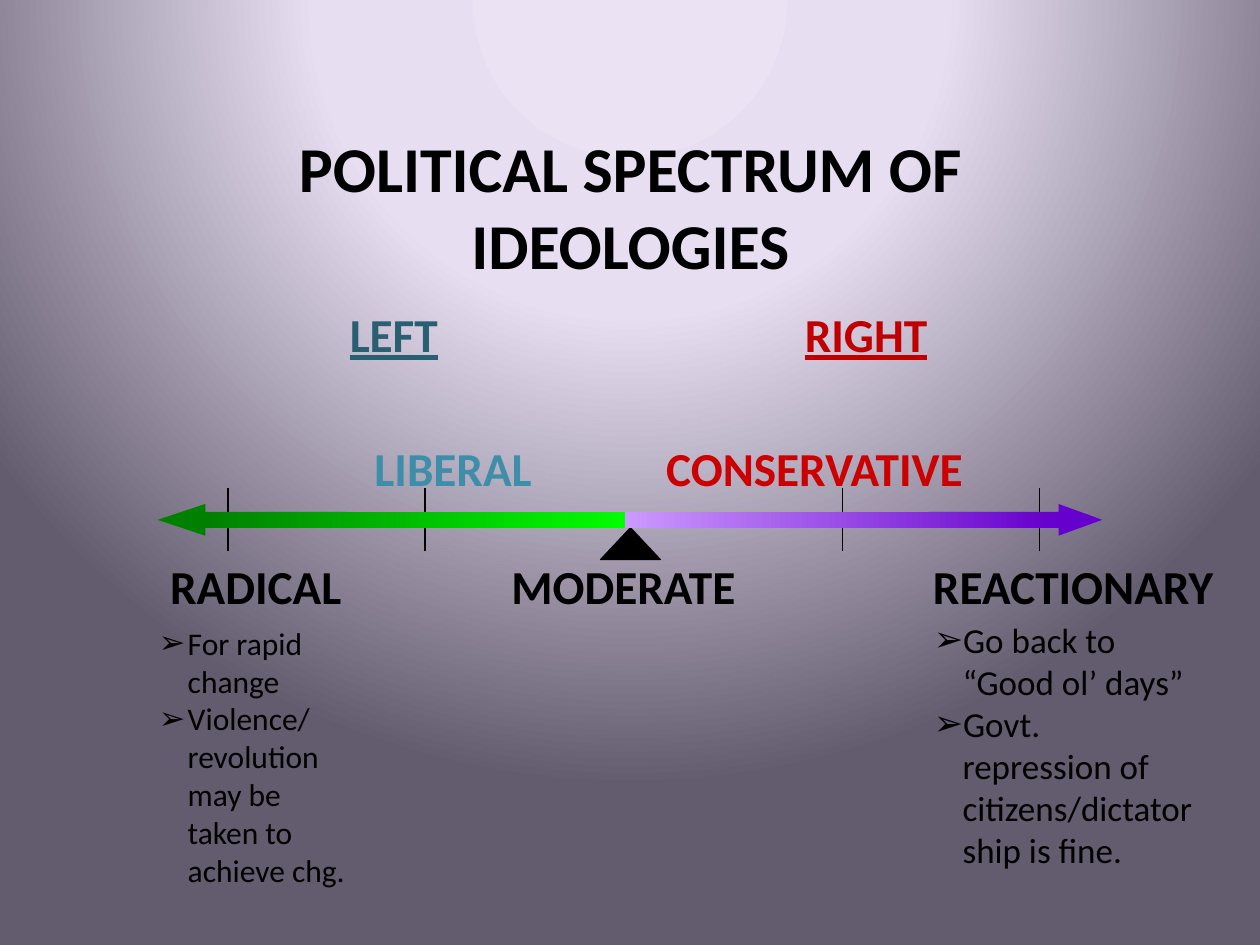
import pptx
import pptx.dml.color
import pptx.enum.shapes
import pptx.enum.text
import pptx.oxml
import pptx.oxml.ns
import pptx.util
from lxml import etree

Cm, Pt = pptx.util.Cm, pptx.util.Pt
RGB = pptx.dml.color.RGBColor.from_string
Shape = pptx.enum.shapes.MSO_SHAPE
Align = pptx.enum.text.PP_ALIGN
qn = pptx.oxml.ns.qn

HUES = {
    "black": "000000", "green": "008000", "lime": "00FF00",
    "lilac": "CC99FF", "purple": "6600CC", "teal": "295F71",
    "blue": "3E8EA9", "red": "CC0000", "dark red": "C00000",
    "glow": "EBE3F4", "pale": "E7DEF2", "dusk": "635B6E",
}


def write(box, text, size=27, hue="black", bold=True, under=False,
          align=Align.LEFT, mark=None, wrap=True):
    frame = box.text_frame
    frame.word_wrap = wrap
    frame.auto_size = pptx.enum.text.MSO_AUTO_SIZE.NONE
    frame.text = text
    for para in frame.paragraphs:
        para.alignment = align
        para.space_before = Pt(0)
        font = para.runs[0].font
        font.name, font.size = "Calibri", Pt(size)
        font.bold, font.underline = bold, under
        font.color.rgb = RGB(HUES[hue])
        if mark:
            props = para._p.get_or_add_pPr()
            props.set("marL", str(Cm(0.58)))
            props.set("indent", str(-Cm(0.58)))
            etree.SubElement(props, qn("a:buFont")).set("typeface", "Wingdings")
            props[-1].set("typeface", "Calibri")
            etree.SubElement(props, qn("a:buChar")).set("char", mark)


def place(box, left, top, width, height):
    box.left, box.top = Cm(left), Cm(top)
    box.width, box.height = Cm(width), Cm(height)


deck = pptx.Presentation()
deck.slide_width, deck.slide_height = Cm(25.4), Cm(19.05)
slide = deck.slides.add_slide(deck.slide_layouts[3])
shapes = slide.shapes

# Round glow behind the slide, centred above its top edge
stops = "".join(
    f'<a:gs pos="{pos * 1000}"><a:srgbClr val="{HUES[hue]}"/></a:gs>'
    for pos, hue in [(0, "glow"), (40, "pale"), (100, "dusk")])
back = pptx.oxml.parse_xml(
    f'<p:bg {pptx.oxml.ns.nsdecls("p", "a")}><p:bgPr><a:gradFill rotWithShape="1">'
    f'<a:gsLst>{stops}</a:gsLst><a:path path="circle">'
    '<a:fillToRect l="50000" t="-80000" r="50000" b="180000"/></a:path>'
    '</a:gradFill><a:effectLst/></p:bgPr></p:bg>')
slide.element.cSld.insert(0, back)

title, left_list, right_list = slide.placeholders
place(title, 3.18, 2.95, 19.05, 2.39)
write(title, "POLITICAL SPECTRUM OF IDEOLOGIES", size=36.5, align=Align.CENTER)
title.text_frame.vertical_anchor = pptx.enum.text.MSO_ANCHOR.MIDDLE

# Arrow ends and the pivot
for kind, spot, hue, adjs in [
    (Shape.LEFT_ARROW, (3.18, 10.16, 3.81, 0.64), "green", (0.5, 1.5)),
    (Shape.RIGHT_ARROW, (18.73, 10.16, 3.49, 0.64), "purple", (0.5, 1.375)),
    (Shape.ISOSCELES_TRIANGLE, (12.11, 10.64, 1.2, 0.64), "black", (0.5,)),
]:
    part = shapes.add_shape(kind, *map(Cm, spot))
    part.shadow.inherit = False
    for i, adj in enumerate(adjs):
        part.adjustments[i] = adj
    part.fill.solid()
    part.fill.fore_color.rgb = RGB(HUES[hue])
    if kind == Shape.ISOSCELES_TRIANGLE:
        part.line.color.rgb = RGB(HUES[hue])
        part.line.width = Pt(0.75)
    else:
        part.line.fill.background()

# Names of the ideologies and the two sides
for text, left, top, width, style in [
    ("RADICAL", 3.18, 11.11, 4.76, {}),
    ("REACTIONARY", 16.61, 11.11, 8.1, {"align": Align.RIGHT}),
    ("MODERATE", 10.06, 11.11, 5.21, {"wrap": False}),
    ("LIBERAL", 7.3, 8.73, 4.76, {"hue": "blue"}),
    ("CONSERVATIVE", 13.18, 8.73, 8.1, {"hue": "red"}),
    ("LEFT", 5.56, 6.03, 4.76,
     {"hue": "teal", "under": True, "align": Align.CENTER}),
    ("RIGHT", 15.08, 6.03, 4.76,
     {"hue": "dark red", "under": True, "align": Align.CENTER}),
]:
    label = shapes.add_textbox(Cm(left), Cm(top), Cm(width), Cm(1.43))
    write(label, text, **style)

for x in (8.57, 4.6, 16.99, 20.96):
    tick = shapes.add_connector(pptx.enum.shapes.MSO_CONNECTOR.STRAIGHT,
                                Cm(x), Cm(9.84), Cm(x), Cm(11.11))
    tick.line.color.rgb = RGB(HUES["black"])
    tick.line.width = Pt(0.75)
    etree.SubElement(tick._element.spPr, qn("a:effectLst"))

# Shaded halves of the axis
for left, hues in [(4.13, ("green", "lime")), (12.6, ("lilac", "purple"))]:
    half = shapes.add_shape(Shape.RECTANGLE, Cm(left), Cm(10.32), Cm(8.58), Cm(0.32))
    half.shadow.inherit = False
    half.line.fill.background()
    half.fill.gradient()
    half.fill.gradient_angle = 0
    for stop, pos, hue in zip(half.fill.gradient_stops, (0, 1), hues):
        stop.position = pos
        stop.color.rgb = RGB(HUES[hue])

for box, spot, size, text in [
    (left_list, (2.95, 12.45, 4.34, 5.64), 18,
     "For rapid change\nViolence/revolution may be taken to achieve chg."),
    (right_list, (18.57, 12.34, 5.77, 5.38), 20,
     "Go back to “Good ol’ days”\n"
     "Govt. repression of citizens/dictatorship is fine."),
]:
    place(box, *spot)
    write(box, text, size=size, bold=False, mark="➢")

deck.save("out.pptx")
